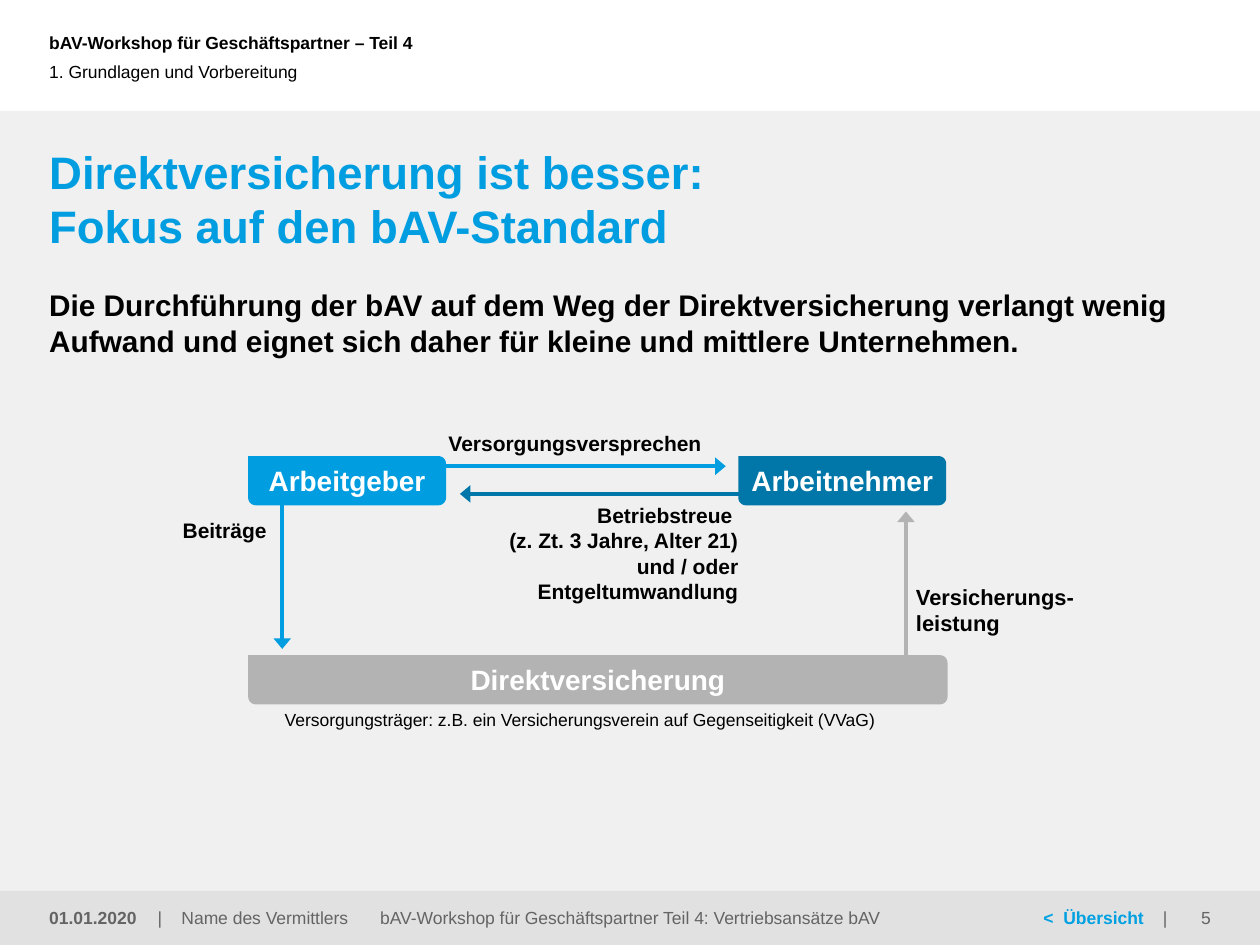
"""Build the slide on direct insurance as the standard route for bAV."""
import math

from lxml import etree
from pptx import Presentation, util as u
from pptx.dml import color
from pptx.enum import shapes, text
from pptx.oxml import ns

HUES = {
    "white": "FFFFFF", "black": "000000", "page": "F0F0F0", "foot": "E1E1E1",
    "note": "646464", "link": "00A0E1", "blue": "009EE0", "deep": "0077A8",
    "gray": "B3B3B3",
}
LEFT, MID, RIGHT = text.PP_ALIGN.LEFT, text.PP_ALIGN.CENTER, text.PP_ALIGN.RIGHT
TOP, CORE = text.MSO_ANCHOR.TOP, text.MSO_ANCHOR.MIDDLE
EDGE = 0.39
FOOT, BAND = 7.07, 0.43


def rgb(hue):
    """Return the named colour."""
    return color.RGBColor.from_string(HUES[hue])


def style(font, size, hue, bold):
    """Set the look of a font."""
    form = {"name": "Arial", "size": u.Pt(size), "bold": bold}
    for key, val in form.items():
        setattr(font, key, val)
    font.color.rgb = rgb(hue)


def add_tabs(para, stops):
    """Give a paragraph left tab stops in inches."""
    props = para._p.get_or_add_pPr()
    tabs = etree.SubElement(props, ns.qn("a:tabLst"))
    for stop in stops:
        etree.SubElement(tabs, ns.qn("a:tab"), pos=str(u.Inches(stop)), algn="l")


def write(shape, words, size, hue="black", bold=False, align=LEFT,
          anchor=TOP, inset=(0, 0, 0, 0), wrap=True, tabs=()):
    """Write text into a shape; words is a string or a list of styled runs."""
    frame = shape.text_frame
    form = {"word_wrap": wrap, "vertical_anchor": anchor}
    sides = ("left", "top", "right", "bottom")
    form.update({f"margin_{s}": u.Inches(v) for s, v in zip(sides, inset)})
    for key, val in form.items():
        setattr(frame, key, val)
    runs = [(words, hue, bold)] if isinstance(words, str) else words
    if len(runs) == 1:
        frame.text = runs[0][0]
    else:
        for part, _, _ in runs:
            frame.paragraphs[0].add_run().text = part
    for para in frame.paragraphs:
        para.alignment = align
        if tabs:
            add_tabs(para, tabs)
        for i, run in enumerate(para.runs):
            _, tint, heavy = runs[min(i, len(runs) - 1)]
            style(run.font, size, tint, heavy)


def label(slide, at, words, size, **form):
    """Add a text box."""
    box = slide.shapes.add_textbox(*map(u.Inches, at))
    write(box, words, size, **form)


def paint(shape, hue):
    """Fill a shape without line or shadow."""
    shape.shadow.inherit = False
    shape.fill.solid()
    shape.fill.fore_color.rgb = rgb(hue)
    shape.line.fill.background()


def band(slide, at, hue):
    """Add a plain rectangle."""
    paint(slide.shapes.add_shape(shapes.MSO_SHAPE.RECTANGLE, *map(u.Inches, at)), hue)


def node(slide, at, words, hue, wrap=False):
    """Add a box with a sharp top left corner and three round ones."""
    x, y, wide, high = map(u.Inches, at)
    rad, steps = u.Inches(0.06), 8
    hubs = [(x + wide - rad, y + rad, -90), (x + wide - rad, y + high - rad, 0),
            (x + rad, y + high - rad, 90)]
    spots = []
    for mid_x, mid_y, start in hubs:
        for i in range(steps + 1):
            turn = math.radians(start + 90 * i / steps)
            spots.append((mid_x + rad * math.cos(turn), mid_y + rad * math.sin(turn)))
    pen = slide.shapes.build_freeform(x, y)
    pen.add_line_segments(spots, close=True)
    shape = pen.convert_to_shape()
    paint(shape, hue)
    write(shape, words, 16, hue="white", bold=True, align=MID, anchor=CORE,
          inset=(0.08, 0.04, 0.08, 0.04), wrap=wrap)


def arrow(slide, ends, hue):
    """Add a straight arrow with a wide head."""
    line = slide.shapes.add_connector(shapes.MSO_CONNECTOR.STRAIGHT, *map(u.Inches, ends))
    line.line.color.rgb = rgb(hue)
    line.line.width = u.Pt(2)
    etree.SubElement(line.line._get_or_add_ln(), ns.qn("a:tailEnd"),
                     type="triangle", w="lg", len="med")
    etree.SubElement(line._element.spPr, ns.qn("a:effectLst"))


def header(slide):
    """Add the page bands, the running head, the title and the lead."""
    band(slide, (0, 0.88, 10, 6.62), "page")
    band(slide, (0, FOOT, 10, BAND), "foot")
    label(slide, (0, 0, 6.98, 0.67), "bAV-Workshop für Geschäftspartner – Teil 4", 10,
          bold=True, anchor=CORE, inset=(EDGE, 0.05, 0.1, 0.05))
    label(slide, (0, 0.25, 7.15, 0.63), "1. Grundlagen und Vorbereitung", 10,
          anchor=CORE, inset=(EDGE, 0, 0, 0))
    label(slide, (EDGE, 1.14, 9.22, 0.55),
          "Direktversicherung ist besser:\vFokus auf den bAV-Standard", 26,
          hue="blue", bold=True)
    label(slide, (EDGE, 2.28, 9.22, 0.57),
          "Die Durchführung der bAV auf dem Weg der Direktversicherung verlangt wenig "
          "Aufwand und eignet sich daher für kleine und mittlere Unternehmen.", 17,
          bold=True)


def footer(slide):
    """Add the texts of the foot band."""
    form = {"hue": "note", "anchor": CORE}
    label(slide, (0, FOOT, 1.22, BAND), "01.01.2020", 10, bold=True,
          inset=(EDGE, 0.05, 0.1, 0.05), **form)
    label(slide, (1.25, FOOT, 2.42, BAND), "|\tName des Vermittlers", 10,
          tabs=[0.19], **form)
    label(slide, (2.85, FOOT, 4.3, BAND),
          "bAV-Workshop für Geschäftspartner Teil 4: Vertriebsansätze bAV", 10,
          align=MID, **form)
    label(slide, (6.88, FOOT, 2.42, BAND),
          [("<\tÜbersicht", "link", True), ("\t|", "note", False)], 10,
          inset=(1.4, 0, 0, 0), tabs=[0.16, 0.95], anchor=CORE)
    label(slide, (9.06, FOOT, 0.94, BAND), "5", 10, align=RIGHT,
          inset=(0.1, 0.05, EDGE, 0.05), **form)


def chart(slide):
    """Add the flow between employer, employee and insurance."""
    for at, words, size, align in [
        ((3.56, 3.42, 2.03, 0.2), "Versorgungsversprechen", 12, LEFT),
        ((3.58, 3.99, 2.28, 0.81), "Betriebstreue \v(z. Zt. 3 Jahre, Alter 21)\v"
         "und / oder\nEntgeltumwandlung", 12, RIGHT),
        ((1.45, 4.11, 0.67, 0.2), "Beiträge", 12, LEFT),
        ((7.27, 4.63, 1.27, 0.42), "Versicherungs-\vleistung", 12.5, LEFT),
    ]:
        label(slide, at, words, size, bold=True, align=align, wrap=align == RIGHT)
    label(slide, (2.26, 5.63, 4.78, 0.21),
          "Versorgungsträger: z.B. ein Versicherungsverein auf Gegenseitigkeit (VVaG)",
          10, wrap=False)
    for ends, hue in [
        ((5.94, 3.92, 3.65, 3.92), "deep"),
        ((2.24, 3.78, 2.24, 5.15), "blue"),
        ((3.47, 3.7, 5.76, 3.7), "blue"),
        ((7.19, 5.44, 7.19, 4.06), "gray"),
    ]:
        arrow(slide, ends, hue)
    node(slide, (1.97, 3.62, 1.57, 0.39), "Arbeitgeber", "blue")
    node(slide, (5.86, 3.62, 1.65, 0.39), "Arbeitnehmer", "deep")
    node(slide, (1.97, 5.2, 5.55, 0.39), "Direktversicherung", "gray", wrap=True)


def main():
    """Build and save the slide."""
    deck = Presentation()
    deck.slide_width, deck.slide_height = u.Inches(10), u.Inches(7.5)
    slide = deck.slides.add_slide(deck.slide_layouts[6])
    header(slide)
    footer(slide)
    chart(slide)
    deck.save("out.pptx")


if __name__ == "__main__":
    main()
